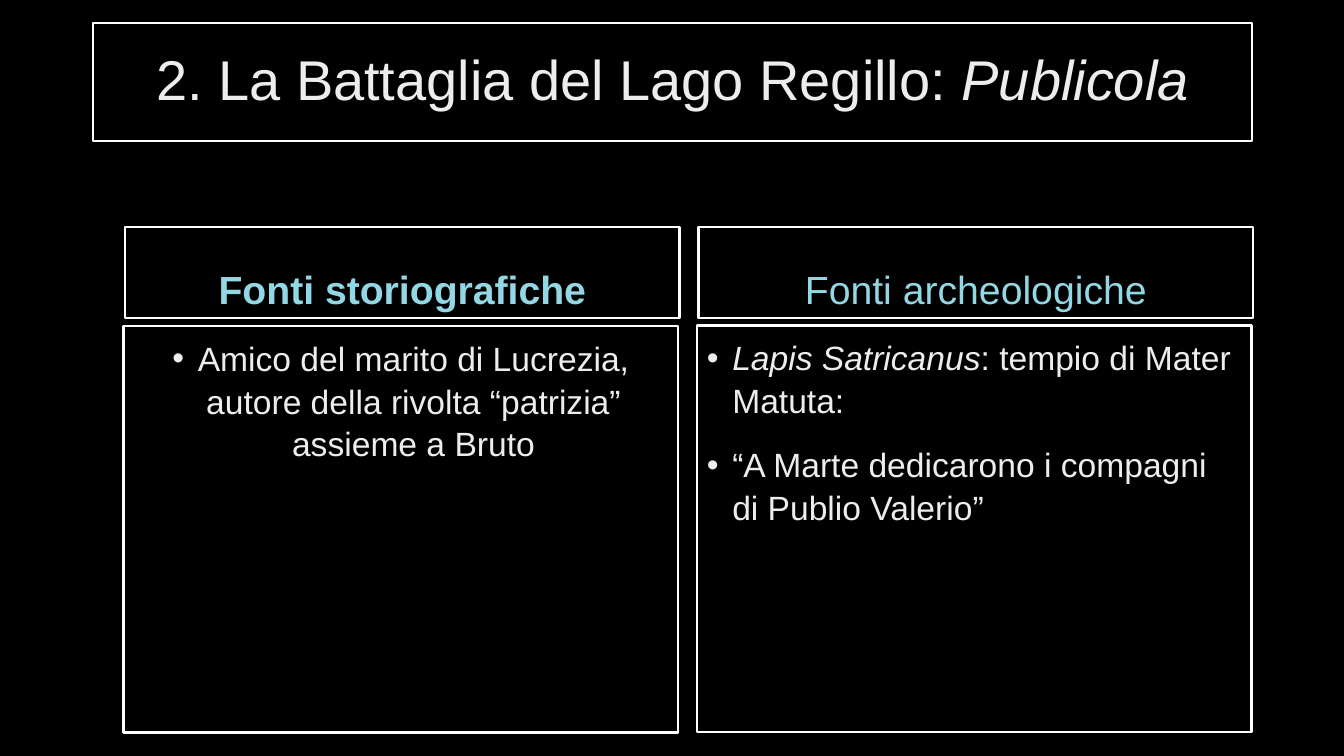
from pptx import Presentation
from pptx.dml.color import RGBColor
from pptx.enum.text import MSO_ANCHOR, MSO_AUTO_SIZE, PP_ALIGN
from pptx.util import Cm, Pt

BLACK = RGBColor(0, 0, 0)
WHITE = RGBColor(255, 255, 255)
PALE = RGBColor(0xED, 0xED, 0xED)
AQUA = RGBColor(0x94, 0xD7, 0xE4)

TITLE = [[("2. La Battaglia del Lago Regillo: ", False), ("Publicola", True)]]
SIDES = [
    {
        "head": "Fonti storiografiche",
        "bold": True,
        "align": PP_ALIGN.CENTER,
        "list": [[("Amico del marito di Lucrezia, autore della rivolta “patrizia” assieme a Bruto", False)]],
    },
    {
        "head": "Fonti archeologiche",
        "bold": False,
        "align": PP_ALIGN.LEFT,
        "list": [
            [("Lapis Satricanus", True), (": tempio di Mater Matuta:", False)],
            [("“A Marte dedicarono i compagni di Publio Valerio”", False)],
        ],
    },
]
LEFT, STEP, WIDE = 3.15, 14.45, 13.98


def fill_box(box, place, paras, size, color, align, anchor, space, bold=False, bullet=False):
    box.left, box.top, box.width, box.height = map(Cm, place)
    box.line.color.rgb = WHITE
    box.line.width = Pt(1.75)
    frame = box.text_frame
    frame.word_wrap = True
    frame.auto_size = MSO_AUTO_SIZE.NONE
    frame.vertical_anchor = anchor
    if bullet:
        frame.margin_top = Cm(0.25)
    for num, runs in enumerate(paras):
        para = frame.add_paragraph() if num else frame.paragraphs[0]
        para.alignment = align
        para.line_spacing = space
        para.space_before = Pt(10 if num else 0)
        if bullet:
            para.space_after = Pt(6)
            props = para._p.get_or_add_pPr()
            props.set("marL", str(Cm(0.64)))
            props.set("indent", str(-Cm(0.64)))
        for text, slant in runs:
            run = para.add_run()
            run.text = text
            run.font.name = "Arial"
            run.font.size = Pt(size)
            run.font.bold = bold
            run.font.italic = slant
            run.font.color.rgb = color


def main():
    deck = Presentation()
    deck.slide_width, deck.slide_height = Cm(33.87), Cm(19.05)
    slide = deck.slides.add_slide(deck.slide_layouts[4])
    slide.background.fill.solid()
    slide.background.fill.fore_color.rgb = BLACK

    title, *boxes = slide.placeholders
    fill_box(title, (2.34, 0.58, 29.21, 2.97), TITLE, 40, PALE,
             PP_ALIGN.CENTER, MSO_ANCHOR.MIDDLE, 0.9)
    for num, side in enumerate(SIDES):
        head, body = boxes[2 * num:2 * num + 2]
        left = LEFT + num * STEP
        fill_box(head, (left, 5.72, WIDE, 2.29), [[(side["head"], False)]], 28, AQUA,
                 PP_ALIGN.CENTER, MSO_ANCHOR.BOTTOM, 0.9, bold=side["bold"])
        fill_box(body, (left - 0.04, 8.22 - 0.02 * num, WIDE, 10.24), side["list"], 24, PALE,
                 side["align"], MSO_ANCHOR.TOP, 1.05, bullet=True)
    deck.save("out.pptx")


if __name__ == "__main__":
    main()
